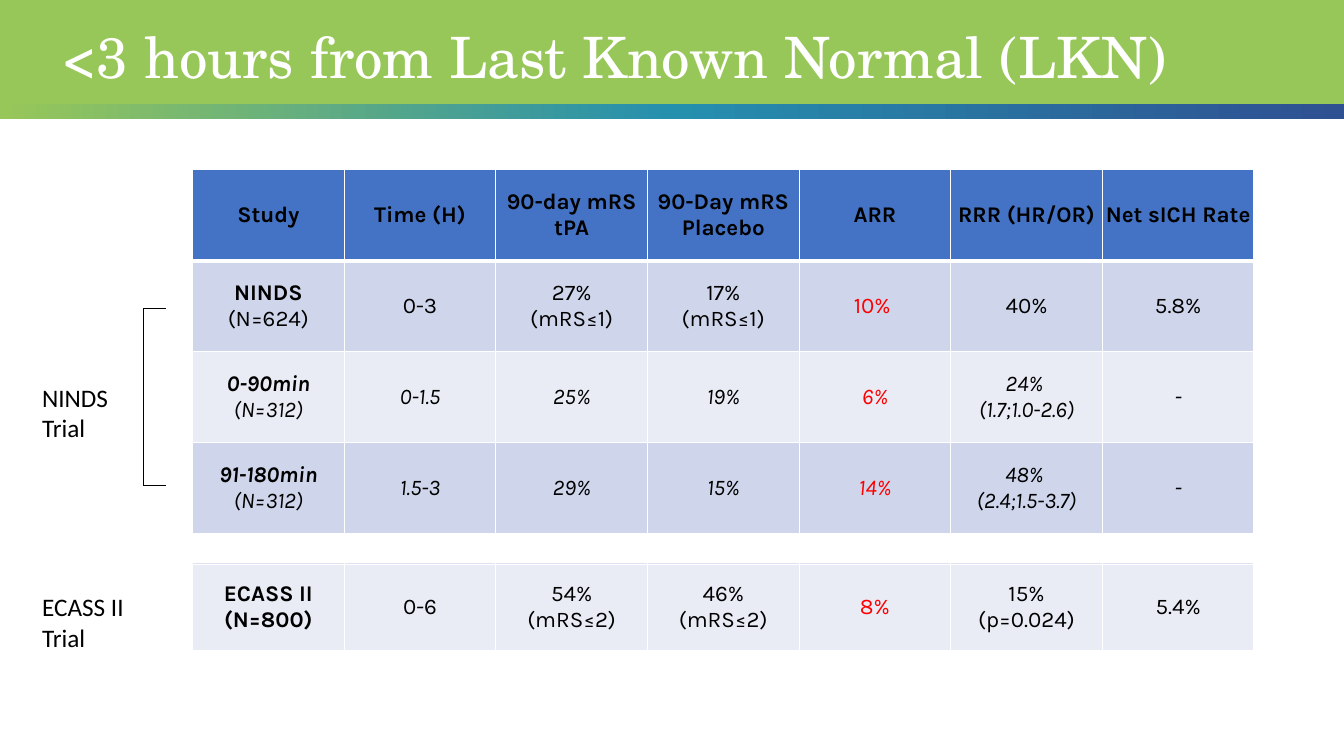
from copy import deepcopy
from dataclasses import dataclass

from lxml import etree
from pptx import Presentation
from pptx.dml.color import RGBColor
from pptx.enum.shapes import MSO_CONNECTOR, MSO_SHAPE
from pptx.enum.text import MSO_ANCHOR, PP_ALIGN
from pptx.oxml.ns import qn
from pptx.shapes.autoshape import Shape
from pptx.slide import Slide
from pptx.table import _Cell
from pptx.text.text import _Paragraph
from pptx.util import Inches, Pt

RECT = MSO_SHAPE.RECTANGLE
STRAIGHT = MSO_CONNECTOR.STRAIGHT
MIDDLE = MSO_ANCHOR.MIDDLE
TOP = MSO_ANCHOR.TOP
CENTER = PP_ALIGN.CENTER

COLORS = {
    "green": "98C759", "teal": "258FAE", "navy": "2F5091",
    "head": "4472C4", "dark": "CFD5EA", "light": "E9EBF5",
    "red": "FF0000", "black": "000000", "white": "FFFFFF",
}
WIDE = 13.33
LEFT, WIDTH, COUNT = 1.91, 10.53, 7
ARR = 4
INSET = Inches(0.03)
BLANK = [""] * COUNT


@dataclass
class Row:
    cells: list[str]
    fill: str
    high: float = 0.9
    head: bool = False
    italic: bool = False
    strong: bool = False


@dataclass
class Label:
    text: str
    top: float


@dataclass
class Line:
    x1: float
    y1: float
    x2: float
    y2: float


TRIAL = [
    Row(["Study", "Time (H)", "90-day mRS\ntPA", "90-Day mRS Placebo", "ARR",
         "RRR (HR/OR)", "Net sICH Rate"], "head", 0.91, head=True),
    Row(["NINDS\n(N=624)", "0-3", "27%\n(mRS≤1)", "17%\n(mRS≤1)", "10% ",
         "40%", "5.8%"], "dark"),
    Row(["0-90min\n(N=312)", "0-1.5", "25%", "19%", "6%",
         "24% \n(1.7;1.0-2.6)", "-"], "light", italic=True),
    Row(["91-180min\n(N=312)", "1.5-3", "29%", "15%", "14%",
         "48% \n(2.4;1.5-3.7)", "-"], "dark", italic=True),
]
ECASS = [
    Row(BLANK, "head", 0.42, head=True),
    Row(BLANK, "dark", 0.86),
    Row(["ECASS II\n(N=800)", "0-6", "54%\n(mRS≤2)", "46%\n(mRS≤2)", "8%",
         "15%\n(p=0.024)", "5.4%"], "light", 0.85, strong=True),
]
LABELS = [Label("NINDS\nTrial", 3.74), Label("ECASS II\nTrial", 5.82)]
BRACKET = [
    Line(1.42, 3.06, 1.42, 4.82),
    Line(1.42, 3.06, 1.65, 3.06),
    Line(1.42, 4.82, 1.65, 4.82),
]


def color(name: str) -> RGBColor:
    return RGBColor.from_string(COLORS[name])


def add_run(para: _Paragraph, text: str, face: str, size: float, ink: str,
            bold: bool = False, italic: bool = False) -> None:
    run = para.add_run()
    run.text = text
    font = run.font
    font.name, font.size = face, Pt(size)
    font.bold, font.italic = bold, italic
    font.color.rgb = color(ink)


def add_band(slide: Slide, left: float, top: float, width: float, high: float,
             fill: str) -> Shape:
    box = map(Inches, (left, top, width, high))
    band = slide.shapes.add_shape(RECT, *box)
    band.shadow.inherit = False
    band.line.fill.background()
    band.fill.solid()
    band.fill.fore_color.rgb = color(fill)
    return band


def blend(band: Shape, names: list[str]) -> None:
    """Fill the band from left to right with evenly spaced colours."""
    band.fill.gradient()
    band.fill.gradient_angle = 0
    first = band._element.spPr.find(".//" + qn("a:gs"))
    for _ in names[2:]:
        first.addnext(deepcopy(first))
    for i, (stop, name) in enumerate(zip(band.fill.gradient_stops, names)):
        stop.color.rgb = color(name)
        stop.position = i / (len(names) - 1)


def add_text(slide: Slide, text: str, box: tuple[float, float, float, float],
             face: str, size: float, ink: str, anchor: MSO_ANCHOR = TOP,
             spacing: float = 1.0) -> None:
    frame = slide.shapes.add_textbox(*map(Inches, box)).text_frame
    frame.word_wrap = True
    frame.vertical_anchor = anchor
    for i, line in enumerate(text.split("\n")):
        para = frame.add_paragraph() if i else frame.paragraphs[0]
        para.line_spacing = spacing
        add_run(para, line, face, size, ink)


def edge(cell: _Cell, bottom: float) -> None:
    """Draw white borders round a cell, with the lower width in points."""
    props = cell._tc.get_or_add_tcPr()
    for side, width in {"L": 1, "R": 1, "T": 1, "B": bottom}.items():
        line = etree.SubElement(props, qn("a:ln" + side), w=str(Pt(width)))
        solid = etree.SubElement(line, qn("a:solidFill"))
        etree.SubElement(solid, qn("a:srgbClr"), val=COLORS["white"])


def fill_cell(cell: _Cell, row: Row, col: int) -> None:
    cell.fill.solid()
    cell.fill.fore_color.rgb = color(row.fill)
    cell.vertical_anchor = MIDDLE
    cell.margin_left = cell.margin_right = INSET
    cell.margin_top = cell.margin_bottom = INSET
    ink = "red" if col == ARR and not row.head else "black"
    for i, line in enumerate(row.cells[col].splitlines()):
        para = cell.text_frame.add_paragraph() if i else cell.text_frame.paragraphs[0]
        para.alignment = CENTER
        bold = row.head or (col == 0 and (i == 0 or row.strong))
        add_run(para, line, "Karla", 16, ink, bold, row.italic)


def add_grid(slide: Slide, rows: list[Row], top: float) -> None:
    high = sum(row.high for row in rows)
    table = slide.shapes.add_table(len(rows), COUNT, Inches(LEFT), Inches(top),
                                   Inches(WIDTH), Inches(high)).table
    table.horz_banding = False
    for col in table.columns:
        col.width = Inches(WIDTH / COUNT)
    for r, row in enumerate(rows):
        table.rows[r].height = Inches(row.high)
        for c in range(COUNT):
            cell = table.cell(r, c)
            edge(cell, 3 if row.head else 1)
            fill_cell(cell, row, c)


def add_line(slide: Slide, line: Line) -> None:
    ends = map(Inches, (line.x1, line.y1, line.x2, line.y2))
    link = slide.shapes.add_connector(STRAIGHT, *ends)
    link.line.color.rgb = color("black")
    link.line.width = Pt(0.5)
    etree.SubElement(link._element.spPr, qn("a:effectLst"))


def main() -> None:
    deck = Presentation()
    deck.slide_width, deck.slide_height = Inches(WIDE), Inches(7.5)
    slide = deck.slides.add_slide(deck.slide_layouts[6])
    add_band(slide, 0, 0, WIDE, 1.04, "green")
    blend(add_band(slide, 0, 1.03, WIDE, 0.15, "green"), ["green", "teal", "navy"])
    add_text(slide, "<3 hours from Last Known Normal (LKN)", (0.52, 0.27, 12.81, 0.69),
             "TeX Gyre Schola", 40.7, "white", MIDDLE, 0.8)
    add_grid(slide, ECASS, 4.32)
    add_grid(slide, TRIAL, 1.68)
    add_band(slide, 1.81, 5.29, 10.93, 0.3, "white")
    for label in LABELS:
        add_text(slide, label.text, (0.32, label.top, 1.46, 0.71), "Calibri", 18, "black")
    for line in BRACKET:
        add_line(slide, line)
    deck.save("out.pptx")


if __name__ == "__main__":
    main()
